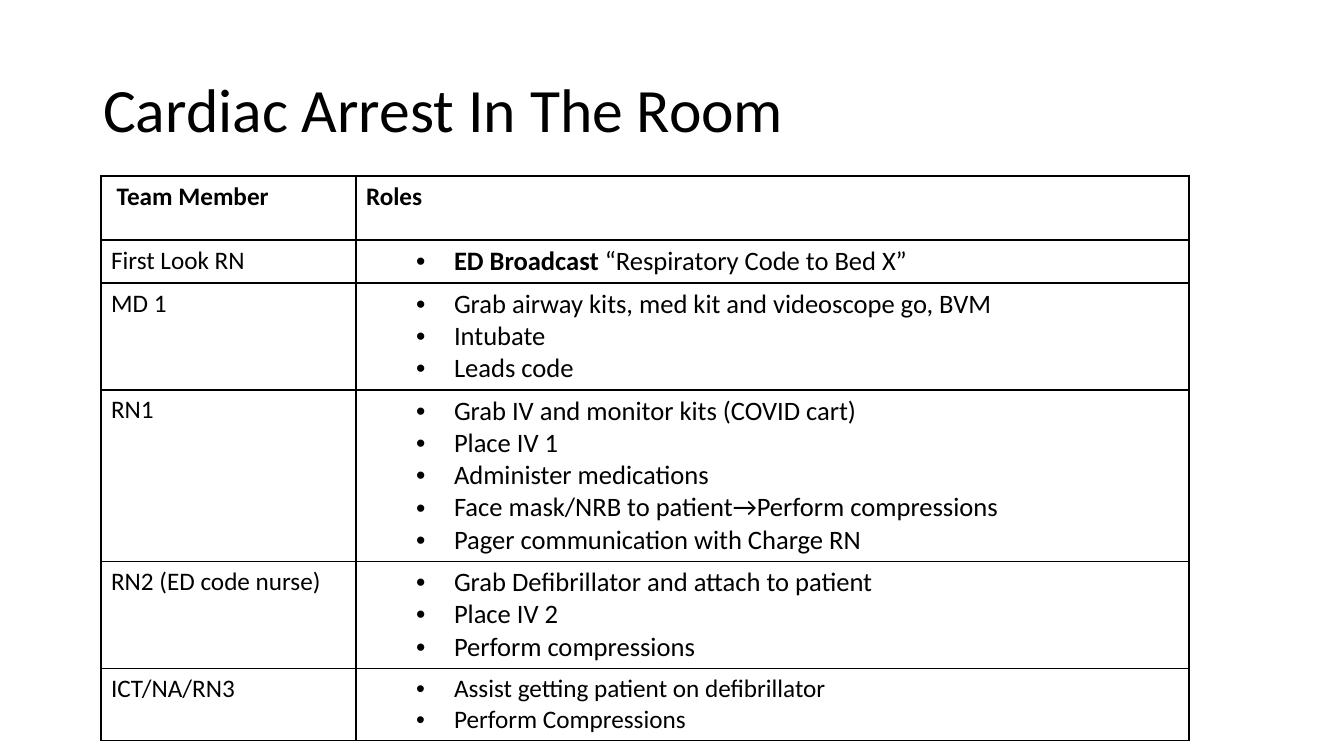
from dataclasses import dataclass

from lxml import etree
from pptx import Presentation
from pptx import util as u
from pptx.dml.color import RGBColor
from pptx.enum import text
from pptx.oxml import ns

TITLE = "Cardiac Arrest In The Room"
HEADER = (" Team Member", "Roles")
BROADCAST = "ED Broadcast"
# member, roles, row height in px
TEAM = [
    ("First Look RN", [BROADCAST + " “Respiratory Code to Bed X”"], 43),
    ("MD 1", ["Grab airway kits, med kit and videoscope go, BVM",
              "Intubate",
              "Leads code"], 107),
    ("RN1", ["Grab IV and monitor kits (COVID cart)",
             "Place IV 1",
             "Administer medications",
             "Face mask/NRB to patient→Perform compressions",
             "Pager communication with Charge RN"], 171),
    ("RN2 (ED code nurse)", ["Grab Defibrillator and attach to patient",
                             "Place IV 2",
                             "Perform compressions"], 107),
    ("ICT/NA/RN3", ["Assist getting patient on defibrillator",
                    "Perform Compressions"], 72),
]
HEADER_H = 64
COLUMNS = (255, 833)
TABLE_AT = (101, 176)
TITLE_BOX = (93, 40, 1159, 146)


@dataclass(frozen=True)
class Theme:
    font: str = "Calibri"
    ink: RGBColor = RGBColor(0, 0, 0)
    title: int = 44
    body: int = 18
    role: int = 19
    border: int = 1


T = Theme()


def px(n):
    return u.Emu(round(n * 914400 / 100.8))


def write(p, words, size=T.body, bold=False):
    r = p.add_run()
    r.text = words
    f = r.font
    f.name, f.size, f.bold = T.font, u.Pt(size), bold
    f.color.rgb = T.ink


def add_bullet(p):
    p.level = 1
    pPr = p._p.get_or_add_pPr()
    pPr.set("marL", str(px(88)))
    pPr.set("indent", str(px(-38)))
    etree.SubElement(pPr, ns.qn("a:buFont"), typeface="Arial")
    etree.SubElement(pPr, ns.qn("a:buChar"), char="•")


def set_borders(cell):
    tcPr = cell._tc.get_or_add_tcPr()
    for i, side in enumerate(("lnL", "lnR", "lnT", "lnB")):
        ln = etree.Element(ns.qn("a:" + side), w=str(u.Pt(T.border)))
        fill = etree.SubElement(ln, ns.qn("a:solidFill"))
        etree.SubElement(fill, ns.qn("a:srgbClr"), val=str(T.ink))
        tcPr.insert(i, ln)


def write_roles(tf, roles, size):
    for i, role in enumerate(roles):
        p = tf.add_paragraph() if i else tf.paragraphs[0]
        add_bullet(p)
        if role.startswith(BROADCAST):
            write(p, BROADCAST, size=size, bold=True)
            role = role.removeprefix(BROADCAST)
        write(p, role, size=size)


def add_title(s):
    title = s.shapes.title
    title.left, title.top, title.width, title.height = map(px, TITLE_BOX)
    tf = title.text_frame
    tf.vertical_anchor = text.MSO_ANCHOR.MIDDLE
    p = tf.paragraphs[0]
    p.alignment = text.PP_ALIGN.LEFT
    p.line_spacing = 0.9
    write(p, TITLE, size=T.title)


def add_team_table(s):
    heights = [HEADER_H] + [h for _, _, h in TEAM]
    box = map(px, (*TABLE_AT, sum(COLUMNS), sum(heights)))
    table = s.shapes.add_table(len(heights), len(COLUMNS), *box).table
    table.first_row = table.horz_banding = False
    for column, w in zip(table.columns, COLUMNS):
        column.width = px(w)
    for row, h in zip(table.rows, heights):
        row.height = px(h)
    for cell in table.iter_cells():
        cell.fill.background()
        set_borders(cell)
    for c, label in enumerate(HEADER):
        write(table.cell(0, c).text_frame.paragraphs[0], label, bold=True)
    for r, (member, roles, _) in enumerate(TEAM, 1):
        write(table.cell(r, 0).text_frame.paragraphs[0], member)
        size = T.body if r == len(TEAM) else T.role
        write_roles(table.cell(r, 1).text_frame, roles, size)


def main():
    prs = Presentation()
    prs.slide_width, prs.slide_height = px(1344), px(756)
    s = prs.slides.add_slide(prs.slide_layouts[5])
    add_title(s)
    add_team_table(s)
    prs.save("out.pptx")


if __name__ == "__main__":
    main()
